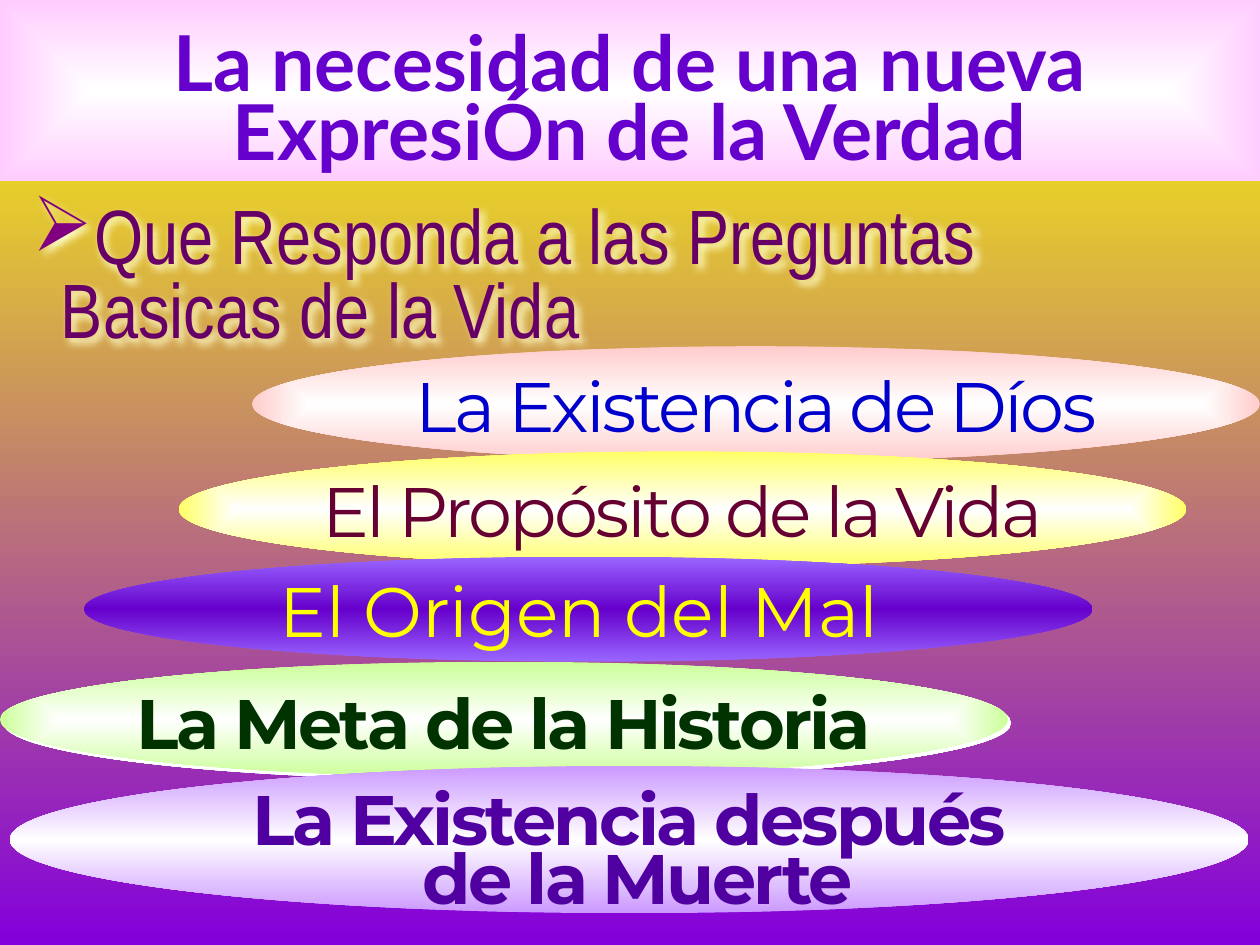
from dataclasses import dataclass

from lxml.etree import SubElement
from pptx import Presentation
from pptx.dml.color import RGBColor
from pptx.enum.shapes import MSO_SHAPE
from pptx.enum.text import MSO_ANCHOR, PP_ALIGN
from pptx.oxml.ns import qn
from pptx.util import Cm, Pt

WHITE = RGBColor(0xFF, 0xFF, 0xFF)
CREAM = RGBColor(0xFF, 0xFF, 0xCC)
YELLOW = RGBColor(0xFF, 0xFF, 0x00)
LEMON = RGBColor(0xFF, 0xFF, 0x66)
ROSE = RGBColor(0xFF, 0xCC, 0xCC)
PINK = RGBColor(0xFF, 0xCC, 0xFF)
LIME = RGBColor(0xCC, 0xFF, 0x99)
LILAC = RGBColor(0xCC, 0x99, 0xFF)
MAUVE = RGBColor(0x99, 0x66, 0xFF)
VIOLET = RGBColor(0x66, 0x00, 0xCC)
INDIGO = RGBColor(0x50, 0x00, 0xA0)
PURPLE = RGBColor(0x83, 0x00, 0xDC)
PLUM = RGBColor(0x66, 0x00, 0x66)
GRAPE = RGBColor(0x80, 0x00, 0x80)
WINE = RGBColor(0x66, 0x00, 0x33)
BLUE = RGBColor(0x00, 0x00, 0xCC)
GREEN = RGBColor(0x00, 0x33, 0x00)


@dataclass
class Type:
    font: str
    size: int
    color: RGBColor
    bold: bool = False
    space: float = 0
    lead: float = 1.0


@dataclass
class Panel:
    box: tuple[float, float, float, float]
    stops: list[RGBColor]
    lines: list[str]
    type: Type
    kind: MSO_SHAPE = MSO_SHAPE.OVAL
    radial: bool = True
    wrap: bool = False
    drop: float = 0


def add(node, tag: str, **attrs):
    return SubElement(node, qn(tag), {k: str(v) for k, v in attrs.items()})


def blend(fill, root, stops: list[RGBColor], radial: bool = False) -> None:
    """Fill with evenly spaced stops, from the centre or from the top."""
    fill.gradient()
    grad = root.find(".//" + qn("a:gradFill"))
    for node in list(grad):
        grad.remove(node)
    group = add(grad, "a:gsLst")
    for i, color in enumerate(stops):
        stop = add(group, "a:gs", pos=100000 * i // (len(stops) - 1))
        add(stop, "a:srgbClr", val=color)
    if radial:
        way = add(grad, "a:path", path="shape")
        add(way, "a:fillToRect", l=50000, t=50000, r=50000, b=50000)
    else:
        add(grad, "a:lin", ang=5400000, scaled=0)


def shade(shape, color: RGBColor, blur: float, dist: float) -> None:
    shape.shadow.inherit = False
    effect = shape.element.spPr.find(qn("a:effectLst"))
    cast = add(effect, "a:outerShdw", blurRad=Pt(blur), dist=Pt(dist),
               dir=2700000, algn="ctr", rotWithShape=0)
    add(cast, "a:srgbClr", val=color)


def style(para, kind: Type):
    """Set the paragraph font and return its XML node."""
    font = para.font
    font.name, font.size, font.bold = kind.font, Pt(kind.size), kind.bold
    font.color.rgb = kind.color
    para.line_spacing = kind.lead
    node = para._p.pPr.find(qn("a:defRPr"))
    if kind.space:
        node.set("spc", str(int(kind.space * 100)))
    return node


def draw(slide, panel: Panel):
    shape = slide.shapes.add_shape(panel.kind, *map(Cm, panel.box))
    shape.shadow.inherit = False
    shape.line.fill.background()
    blend(shape.fill, shape.element, panel.stops, panel.radial)
    frame = shape.text_frame
    frame.word_wrap = panel.wrap
    frame.vertical_anchor = MSO_ANCHOR.MIDDLE
    frame.margin_top = Cm(0.13 + panel.drop)
    for i, line in enumerate(panel.lines):
        para = frame.add_paragraph() if i else frame.paragraphs[0]
        para.text = line
        para.alignment = PP_ALIGN.CENTER
        style(para, panel.type)
    return shape


def lead(slide) -> None:
    """Draw the bulleted statement above the ovals."""
    box = slide.shapes.add_textbox(Cm(0.41), Cm(4.01), Cm(21.18), Cm(3.23))
    frame = box.text_frame
    frame.word_wrap = True
    frame.vertical_anchor = MSO_ANCHOR.MIDDLE
    para = frame.paragraphs[0]
    para.text = "Que Responda a las Preguntas Basicas de la Vida"
    node = style(para, Type("Arial Narrow", 44, PLUM, lead=0.8))
    props = para._p.pPr
    props.set("marL", str(Cm(0.57)))
    props.set("indent", str(-Cm(0.57)))
    tint = add(props, "a:buClr")
    add(tint, "a:srgbClr", val=GRAPE)
    mark = add(props, "a:buChar", char="➢")
    node.addprevious(tint)
    node.addprevious(mark)
    shade(box, CREAM, 4, 3)


def oval(color: RGBColor, bold: bool = False, space: float = -1.5,
         lead: float = 1.0) -> Type:
    return Type("Montserrat", 40, color, bold, space, lead)


WIDE = 20.32
GOD = Panel((5.08, 6.98, WIDE, 2.33), [WHITE, ROSE],
            ["La Existencia de Díos"], oval(BLUE))
AIM = Panel((3.6, 9.1, WIDE, 2.33), [WHITE, LEMON],
            ["El Propósito de la Vida"], oval(WINE))
EVIL = Panel((1.7, 11.22, WIDE, 2.12), [MAUVE, VIOLET, MAUVE],
             ["El Origen del Mal "], oval(YELLOW, space=0), radial=False)
GOAL = Panel((0, 13.34, WIDE, 2.33), [WHITE, LIME],
             ["La Meta de la Historia"], oval(GREEN, True), drop=0.08)
TITLE = Panel((0, 0, 25.4, 3.66), [WHITE, PINK],
              ["La necesidad de una nueva ExpresiÓn de la Verdad"],
              Type("Lato", 44, VIOLET, True, lead=0.75),
              MSO_SHAPE.RECTANGLE, wrap=True, drop=0.57)
DEATH = Panel((0.2, 15.44, 24.97, 2.97), [LILAC, WHITE, LILAC],
              ["La Existencia después", " de la Muerte"],
              oval(INDIGO, True, lead=0.7), radial=False, drop=0.7)


def main() -> None:
    deck = Presentation()
    deck.slide_width, deck.slide_height = Cm(25.4), Cm(19.05)
    slide = deck.slides.add_slide(deck.slide_layouts[6])

    # Background
    blend(slide.background.fill, slide.element, [YELLOW, PURPLE])

    # Questions, from back to front
    for panel in (GOD, AIM, EVIL):
        draw(slide, panel)
    shade(draw(slide, GOAL), WHITE, 0, 2.8)

    # Statement, title and last question
    lead(slide)
    draw(slide, TITLE)
    draw(slide, DEATH)
    deck.save("out.pptx")


if __name__ == "__main__":
    main()
